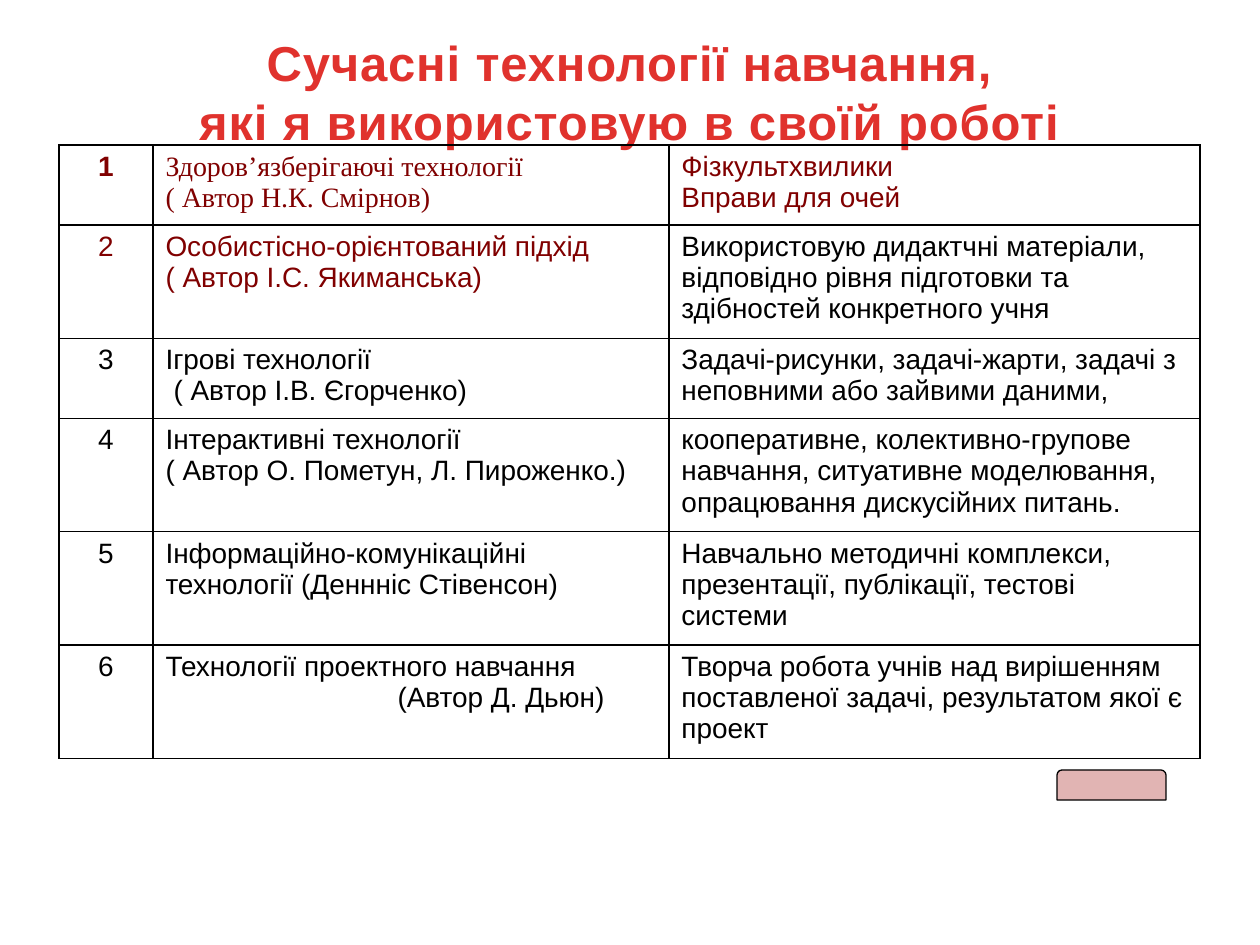
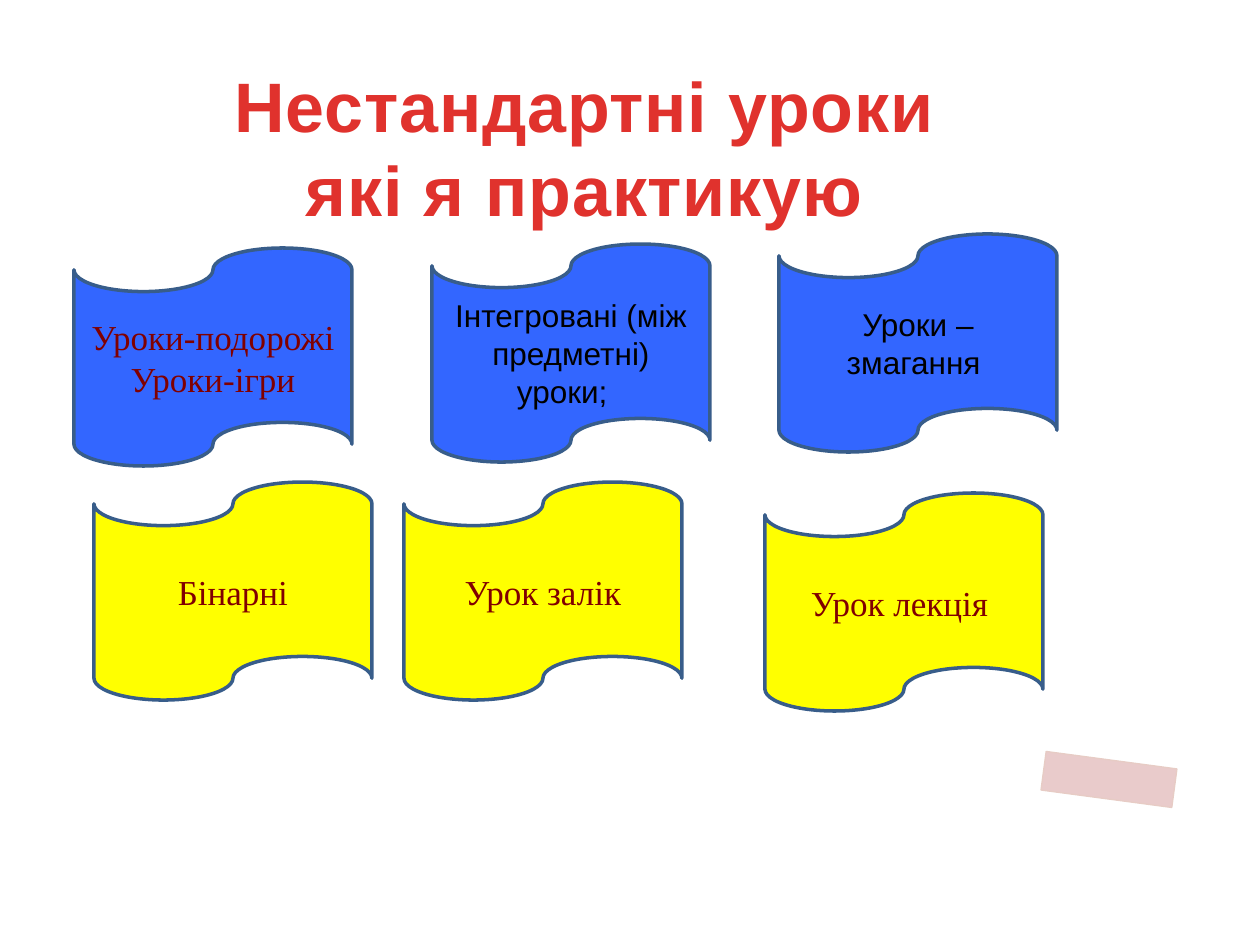
from dataclasses import dataclass
from typing import Optional

from lxml import etree
from pptx import Presentation
from pptx import util as u
from pptx.dml import color
from pptx.enum import shapes, text
from pptx.oxml import ns

PX = 914400 / 126
RED, MAROON, BLACK = "E0322D", "800000", "000000"
BLUE, YELLOW, TAPE_EDGE = "3366FF", "FFFF00", "385D8A"
ARIAL, TIMES = "Arial", "Times New Roman"
CENTER, LEFT = text.PP_ALIGN.CENTER, text.PP_ALIGN.LEFT


@dataclass(frozen=True)
class Style:
    size: int
    face: str = ARIAL
    shade: str = BLACK
    bold: bool = False


@dataclass(frozen=True)
class Box:
    left: int
    top: int
    width: int
    height: int

    def emu(self) -> tuple:
        return tuple(px(n) for n in (self.left, self.top, self.width, self.height))


@dataclass(frozen=True)
class Entry:
    lines: tuple
    style: Style
    indent: int = 0


@dataclass(frozen=True)
class Technology:
    number_style: Style
    method: Entry
    practice: Entry
    height: int


@dataclass(frozen=True)
class Lesson:
    left: int
    top: int
    fill: str
    lines: tuple
    style: Style


BODY = Style(16)
BODY_MAROON = Style(16, shade=MAROON)
TAPE_TIMES = Style(20, TIMES, MAROON)
TAPE_ARIAL = Style(18)
TWO_LINES, THREE_LINES = 80, 113

TECHNOLOGIES = (
    Technology(
        Style(16, shade=MAROON, bold=True),
        Entry(("Здоров’язберігаючі технології", "( Автор Н.К. Смірнов)"),
              Style(16, TIMES, MAROON)),
        Entry(("Фізкультхвилики", "Вправи для очей"), BODY_MAROON),
        TWO_LINES),
    Technology(
        BODY_MAROON,
        Entry(("Особистісно-орієнтований підхід", "( Автор І.С. Якиманська)"),
              BODY_MAROON),
        Entry(("Використовую дидактчні матеріали, відповідно рівня підготовки "
               "та здібностей конкретного учня",), BODY),
        THREE_LINES),
    Technology(
        BODY,
        Entry(("Ігрові технології", "( Автор І.В. Єгорченко)"), BODY, 8),
        Entry(("Задачі-рисунки, задачі-жарти, задачі з неповними або зайвими "
               "даними,",), BODY),
        TWO_LINES),
    Technology(
        BODY,
        Entry(("Інтерактивні технології", "( Автор О. Пометун, Л. Пироженко.)"),
              BODY),
        Entry(("кооперативне, колективно-групове навчання, ситуативне "
               "моделювання, опрацювання дискусійних питань.",), BODY),
        THREE_LINES),
    Technology(
        BODY,
        Entry(("Інформаційно-комунікаційні технології (Деннніс Стівенсон)",), BODY),
        Entry(("Навчально методичні комплекси, презентації, публікації, "
               "тестові системи",), BODY),
        THREE_LINES),
    Technology(
        BODY,
        Entry(("Технології проектного навчання", "(Автор Д. Дьюн)"), BODY, 232),
        Entry(("Творча робота учнів над вирішенням поставленої задачі, "
               "результатом якої є проект",), BODY),
        THREE_LINES),
)
COLUMNS = (94, 516, 531)

LESSONS = (
    Lesson(74, 248, BLUE, ("Уроки-подорожі", "Уроки-ігри"), TAPE_TIMES),
    Lesson(432, 244, BLUE, ("Інтегровані (між предметні) уроки;  ",), TAPE_ARIAL),
    Lesson(779, 234, BLUE, ("Уроки – змагання ",), TAPE_ARIAL),
    Lesson(94, 482, YELLOW, ("Бінарні",), TAPE_TIMES),
    Lesson(404, 482, YELLOW, ("Урок залік",), TAPE_TIMES),
    Lesson(765, 493, YELLOW, ("Урок лекція ",), TAPE_TIMES),
)


def px(length: int) -> u.Emu:
    return u.Emu(round(length * PX))


def rgb(hex_code: str) -> color.RGBColor:
    return color.RGBColor.from_string(hex_code)


def write(frame, lines: tuple, style: Style, align=CENTER, indent: int = 0,
          spacing: Optional[int] = None) -> None:
    for index, line in enumerate(lines):
        paragraph = frame.paragraphs[0] if index == 0 else frame.add_paragraph()
        paragraph.alignment = align
        if index and indent:
            paragraph._p.get_or_add_pPr().set("indent", str(px(indent)))
        run = paragraph.add_run()
        run.text = line
        if spacing:
            run._r.get_or_add_rPr().set("spc", str(spacing))
        font = paragraph.font
        font.size, font.name, font.bold = u.Pt(style.size), style.face, style.bold
        font.color.rgb = rgb(style.shade)


def add_title(slide, box: Box, lines: tuple, size: int, wrap: bool) -> None:
    frame = slide.shapes.add_textbox(*box.emu()).text_frame
    frame.word_wrap = wrap
    write(frame, lines, Style(size, shade=RED, bold=True), spacing=50)


def add_figure(slide, kind, box: Box, fill: str, edge: str, weight: float):
    figure = slide.shapes.add_shape(kind, *box.emu())
    figure.shadow.inherit = False
    figure.fill.solid()
    figure.fill.fore_color.rgb = rgb(fill)
    figure.line.color.rgb = rgb(edge)
    figure.line.width = u.Pt(weight)
    return figure


def frame_cell(cell) -> None:
    cell.fill.background()
    properties = cell._tc.get_or_add_tcPr()
    for index, side in enumerate(("lnL", "lnR", "lnT", "lnB")):
        border = etree.Element(ns.qn(f"a:{side}"), w=str(u.Pt(1)))
        solid = etree.SubElement(border, ns.qn("a:solidFill"))
        etree.SubElement(solid, ns.qn("a:srgbClr"), val=BLACK)
        properties.insert(index, border)


def add_technology_table(slide) -> None:
    box = Box(59, 145, sum(COLUMNS), sum(t.height for t in TECHNOLOGIES))
    table = slide.shapes.add_table(len(TECHNOLOGIES), len(COLUMNS), *box.emu()).table
    table.first_row = table.horz_banding = False
    for column, width in zip(table.columns, COLUMNS):
        column.width = px(width)
    for number, (row, technology) in enumerate(zip(table.rows, TECHNOLOGIES), 1):
        row.height = px(technology.height)
        entries = (Entry((str(number),), technology.number_style),
                   technology.method, technology.practice)
        for position, (cell, entry) in enumerate(zip(row.cells, entries)):
            write(cell.text_frame, entry.lines, entry.style,
                  LEFT if position else CENTER, entry.indent)
            frame_cell(cell)


def add_lesson(slide, lesson: Lesson) -> None:
    tape = add_figure(slide, shapes.MSO_SHAPE.FLOWCHART_PUNCHED_TAPE,
                      Box(lesson.left, lesson.top, 278, 218),
                      lesson.fill, TAPE_EDGE, 2)
    frame = tape.text_frame
    frame.word_wrap = True
    frame.vertical_anchor = text.MSO_ANCHOR.MIDDLE
    write(frame, lesson.lines, lesson.style)


def build_technologies(slide) -> None:
    add_title(slide, Box(181, 26, 897, 131),
              ("Сучасні технології навчання,", "які я використовую в своїй роботі"),
              28, False)
    add_technology_table(slide)
    add_figure(slide, shapes.MSO_SHAPE.ROUND_2_SAME_RECTANGLE,
               Box(1057, 770, 109, 30), "E1B4B3", BLACK, 0.75)


def build_lessons(slide) -> None:
    add_title(slide, Box(143, 56, 883, 183),
              ("Нестандартні уроки", "які я практикую"), 40, True)
    for lesson in LESSONS:
        add_lesson(slide, lesson)
    marker = add_figure(slide, shapes.MSO_SHAPE.RECTANGLE,
                        Box(1043, 760, 132, 39), "E9CBCB", "E7CCC5", 0.75)
    marker.rotation = 7.6


def main() -> None:
    deck = Presentation()
    deck.slide_width, deck.slide_height = px(1260), px(945)
    for build in (build_technologies, build_lessons):
        build(deck.slides.add_slide(deck.slide_layouts[6]))
    deck.save("out.pptx")


if __name__ == "__main__":
    main()
